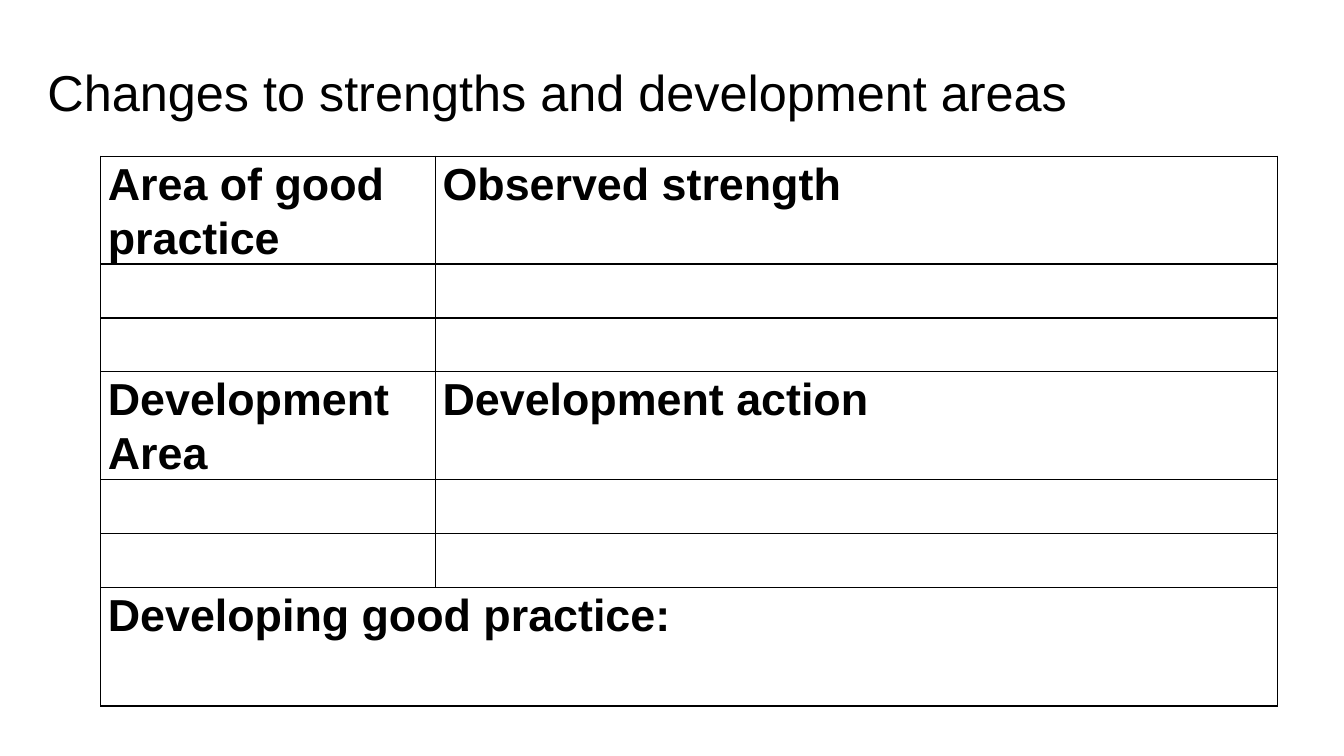
from lxml.etree import SubElement
from pptx import Presentation
from pptx.dml.color import RGBColor
from pptx.enum.text import MSO_ANCHOR, PP_ALIGN
from pptx.oxml.ns import qn
from pptx.util import Inches, Pt

BLACK = "000000"
LINE_HEIGHT = 0.535
HEADINGS = {
    0: ("Area of good practice", "Observed strength"),
    3: ("Development Area", "Development action"),
    6: ("Developing good practice:",),
}
COLUMN_WIDTHS = (3.32, 8.35)
# Heading rows hold two lines, entry rows one, the last row adds a paragraph gap
ROW_HEIGHTS = [LINE_HEIGHT * lines for lines in (2, 1, 1, 2, 1, 1, 2.2)]

TITLE_FONT = {"name": "Arial", "size": Pt(36), "bold": False}
HEADING_FONT = {"name": "Arial", "size": Pt(32), "bold": True}
TITLE_PARAGRAPH = {"alignment": PP_ALIGN.LEFT, "line_spacing": 0.9}
HEADING_PARAGRAPH = {"line_spacing": 1.07, "space_after": Pt(8)}
CELL_FORMAT = {
    "margin_left": Inches(0.07), "margin_right": Inches(0.07),
    "margin_top": 0, "margin_bottom": 0,
}


def apply(target, values):
    for attribute, value in values.items():
        setattr(target, attribute, value)


def set_color(color_format, hex_color):
    color_format.rgb = RGBColor.from_string(hex_color)


def write(text_frame, text, paragraph_format, font_format):
    paragraph = text_frame.paragraphs[0]
    apply(paragraph, paragraph_format)
    run = paragraph.add_run()
    run.text = text
    apply(run.font, font_format)
    set_color(run.font.color, BLACK)


def add_borders(cell, hex_color, points):
    properties = cell._tc.get_or_add_tcPr()
    for side in ("a:lnL", "a:lnR", "a:lnT", "a:lnB"):
        border = SubElement(properties, qn(side), w=str(Pt(points)))
        fill = SubElement(border, qn("a:solidFill"))
        SubElement(fill, qn("a:srgbClr"), val=hex_color)


def add_title(slide, text):
    title = slide.shapes.title
    apply(title, {"left": Inches(0.37), "top": Inches(0.52),
                  "width": Inches(11.5), "height": Inches(0.84)})
    apply(title.text_frame, {"word_wrap": True,
                             "vertical_anchor": MSO_ANCHOR.MIDDLE})
    write(title.text_frame, text, TITLE_PARAGRAPH, TITLE_FONT)


def add_practice_table(slide):
    table = slide.shapes.add_table(
        len(ROW_HEIGHTS), len(COLUMN_WIDTHS), Inches(1), Inches(1.55),
        Inches(sum(COLUMN_WIDTHS)), Inches(sum(ROW_HEIGHTS))).table
    apply(table, {"first_row": False, "horz_banding": False})
    for column, width in zip(table.columns, COLUMN_WIDTHS):
        column.width = Inches(width)
    for row, height in zip(table.rows, ROW_HEIGHTS):
        row.height = Inches(height)

    # Plain ruled cells
    for cell in table.iter_cells():
        apply(cell, CELL_FORMAT)
        add_borders(cell, BLACK, 1)
        cell.fill.background()

    # Headings, the last one across both columns
    table.cell(6, 0).merge(table.cell(6, 1))
    for row_index, headings in HEADINGS.items():
        for column_index, heading in enumerate(headings):
            write(table.cell(row_index, column_index).text_frame, heading,
                  HEADING_PARAGRAPH, HEADING_FONT)


def main():
    presentation = Presentation()
    apply(presentation, {"slide_width": Inches(13.33),
                         "slide_height": Inches(7.5)})
    slide = presentation.slides.add_slide(presentation.slide_layouts[5])
    add_title(slide, "Changes to strengths and development areas")
    add_practice_table(slide)
    presentation.save("out.pptx")


if __name__ == "__main__":
    main()
